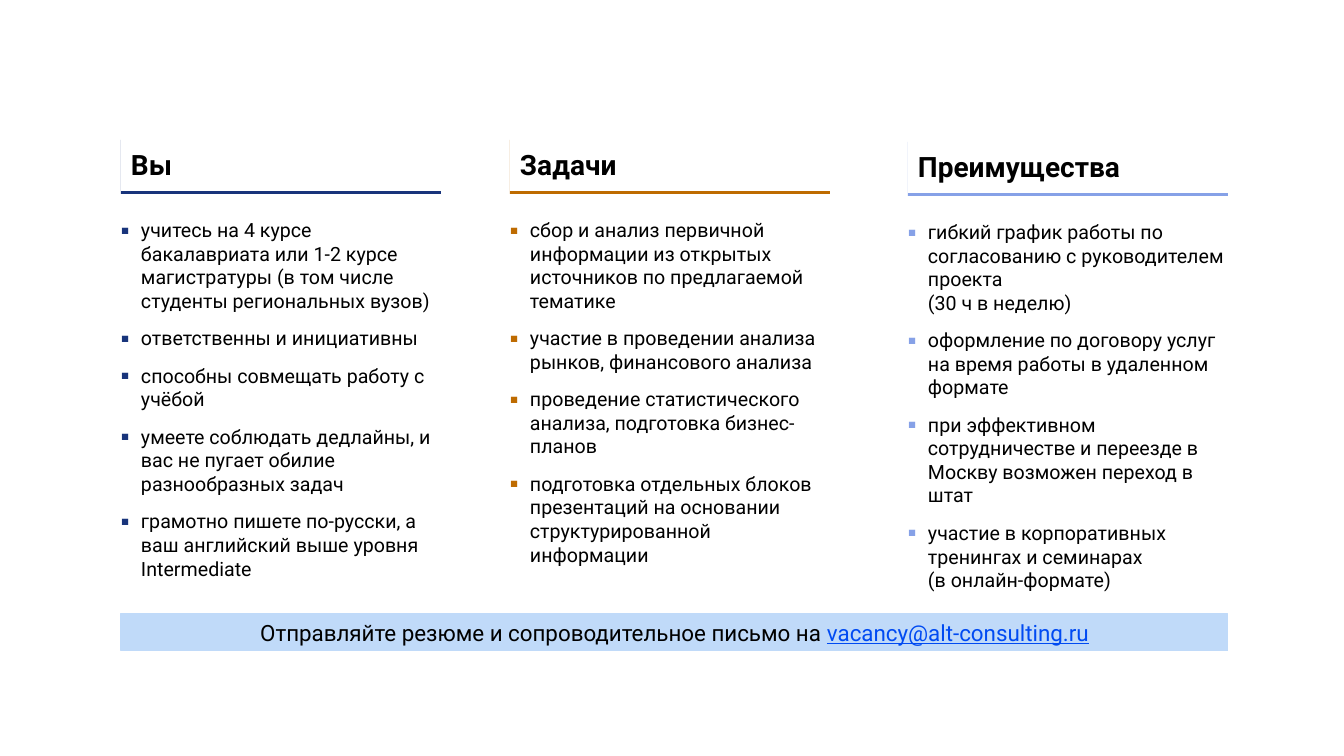
from lxml import etree
from pptx import Presentation
from pptx.dml.color import RGBColor
from pptx.enum.shapes import MSO_SHAPE
from pptx.enum.text import MSO_ANCHOR, MSO_AUTO_SIZE, PP_ALIGN
from pptx.oxml.ns import qn
from pptx.util import Emu, Pt

RECT = MSO_SHAPE.RECTANGLE
TOP, MIDDLE, BOTTOM = MSO_ANCHOR.TOP, MSO_ANCHOR.MIDDLE, MSO_ANCHOR.BOTTOM
FIXED, GROW = MSO_AUTO_SIZE.NONE, MSO_AUTO_SIZE.SHAPE_TO_FIT_TEXT
LEFT, CENTER = PP_ALIGN.LEFT, PP_ALIGN.CENTER
COMPARISON_LAYOUT = 4

COLUMNS = [
    ("Вы", "18347B", 121, 137, 314, [
        "учитесь на 4 курсе бакалавриата или 1-2 курсе магистратуры (в том числе студенты региональных вузов)",
        "ответственны и инициативны",
        "способны совмещать работу с учёбой",
        "умеете соблюдать дедлайны, и вас не пугает обилие разнообразных задач",
        "грамотно пишете по-русски, а ваш английский выше уровня Intermediate",
    ]),
    ("Задачи", "BE6B00", 510, 137, 319, [
        "сбор и анализ первичной информации из открытых источников по предлагаемой тематике",
        "участие в проведении анализа рынков, финансового анализа",
        "проведение статистического анализа, подготовка бизнес-планов",
        "подготовка отдельных блоков презентаций на основании структурированной информации",
    ]),
    ("Преимущества", "86A1E7", 908, 139, 320, [
        "гибкий график работы по согласованию с руководителем проекта \n(30 ч в неделю)",
        "оформление по договору услуг на время работы в удаленном формате",
        "при эффективном сотрудничестве и переезде в Москву возможен переход в штат",
        "участие в корпоративных тренингах и семинарах \n(в онлайн-формате)",
    ]),
]


def px(length):
    """Turn whole pixels into EMU."""
    return Emu(round(length * 12192000 / 1344))


def color(value):
    """Turn a hex string into a colour."""
    return RGBColor.from_string(value)


def child(parent, tag, **attributes):
    """Append a DrawingML element to its parent."""
    return etree.SubElement(parent, qn(tag), {k: str(v) for k, v in attributes.items()})


class VacancySlide:
    """Hold the style and the current slide."""

    font = "Roboto"
    ink = "000000"

    def __init__(self, deck):
        """Add a slide whose body placeholders receive the lists."""
        self.slide = deck.slides.add_slide(deck.slide_layouts[COMPARISON_LAYOUT])
        self.bodies = list(self.slide.placeholders)[1:]

    def add_text(self, paragraph, text, size, bold=False, ink=ink, underline=False):
        """Add runs to a paragraph, breaking lines at newlines."""
        for number, line in enumerate(text.split("\n")):
            if number:
                paragraph.add_line_break()
            run = paragraph.add_run()
            run.text = line
            run.font.name = self.font
            run.font.size = Pt(size)
            run.font.bold = bold
            run.font.underline = underline
            run.font.color.rgb = color(ink)

    def frame(self, shape, anchor, inset_x, inset_y, fit):
        """Set the text area of a shape and return its text frame."""
        frame = shape.text_frame
        frame.word_wrap = True
        frame.auto_size = fit
        frame.vertical_anchor = anchor
        frame.margin_left = frame.margin_right = px(inset_x)
        frame.margin_top = frame.margin_bottom = px(inset_y)
        return frame

    def panel(self, left, top, width, height, fill):
        """Add a filled rectangle without a shadow."""
        panel = self.slide.shapes.add_shape(RECT, px(left), px(top), px(width), px(height))
        panel.shadow.inherit = False
        panel.fill.solid()
        panel.fill.fore_color.rgb = color(fill)
        panel.line.fill.background()
        return panel

    def heading(self, text, accent, left, top):
        """Add a column heading underlined by a hard shadow."""
        panel = self.panel(left, top, 320, 54, "FFFFFF")
        effects = panel.element.spPr.find(qn("a:effectLst"))
        shadow = child(effects, "a:outerShdw", blurRad=0, dist=Pt(2), dir=5400000,
                       algn="t", rotWithShape=0)
        child(shadow, "a:srgbClr", val=accent)
        paragraph = self.frame(panel, BOTTOM, 10, 10, GROW).paragraphs[0]
        paragraph.alignment = LEFT
        self.add_text(paragraph, text, 20, bold=True)

    def bullets(self, items, accent, left, top, width):
        """Fill the next body placeholder with a bulleted list."""
        body = self.bodies.pop(0)
        body.left, body.top, body.width, body.height = px(left), px(top), px(width), px(404)
        frame = self.frame(body, TOP, 0, 10, FIXED)
        for number, item in enumerate(items):
            paragraph = frame.add_paragraph() if number else frame.paragraphs[0]
            properties = paragraph._p.get_or_add_pPr()
            properties.set("marL", str(px(20)))
            properties.set("indent", str(px(-20)))
            child(child(properties, "a:buClr"), "a:srgbClr", val=accent)
            child(properties, "a:buSzPct", val=110000)
            child(properties, "a:buFont", typeface=self.font)
            child(properties, "a:buChar", char="▪")
            child(child(properties, "a:tabLst"), "a:tab", pos=px(59), algn="l")
            paragraph.space_before = Pt(0)
            paragraph.space_after = Pt(10)
            self.add_text(paragraph, item, 14)

    def contact(self, invitation, address):
        """Add the bar with the contact address."""
        bar = self.panel(121, 614, 1107, 37, "C0DAF9")
        bar.line.color.rgb = color("C0DAF9")
        bar.line.width = Pt(0.75)
        paragraph = self.frame(bar, MIDDLE, 10, 5, FIXED).paragraphs[0]
        paragraph.alignment = CENTER
        self.add_text(paragraph, invitation, 16)
        self.add_text(paragraph, address, 16, ink="004AF2", underline=True)

    def drop_empty(self):
        """Remove the placeholders that hold no text."""
        for placeholder in list(self.slide.placeholders):
            if not placeholder.text_frame.text:
                placeholder.element.getparent().remove(placeholder.element)


def main():
    """Build and save the slide."""
    deck = Presentation()
    deck.slide_width, deck.slide_height = px(1344), px(756)
    vacancy = VacancySlide(deck)
    for title, accent, left, top, list_width, items in COLUMNS:
        vacancy.heading(title, accent, left, top)
        vacancy.bullets(items, accent, left, top + 71, list_width)
    vacancy.contact("Отправляйте резюме и сопроводительное письмо на ", "vacancy@alt-consulting.ru")
    vacancy.drop_empty()
    deck.save("out.pptx")


if __name__ == "__main__":
    main()
